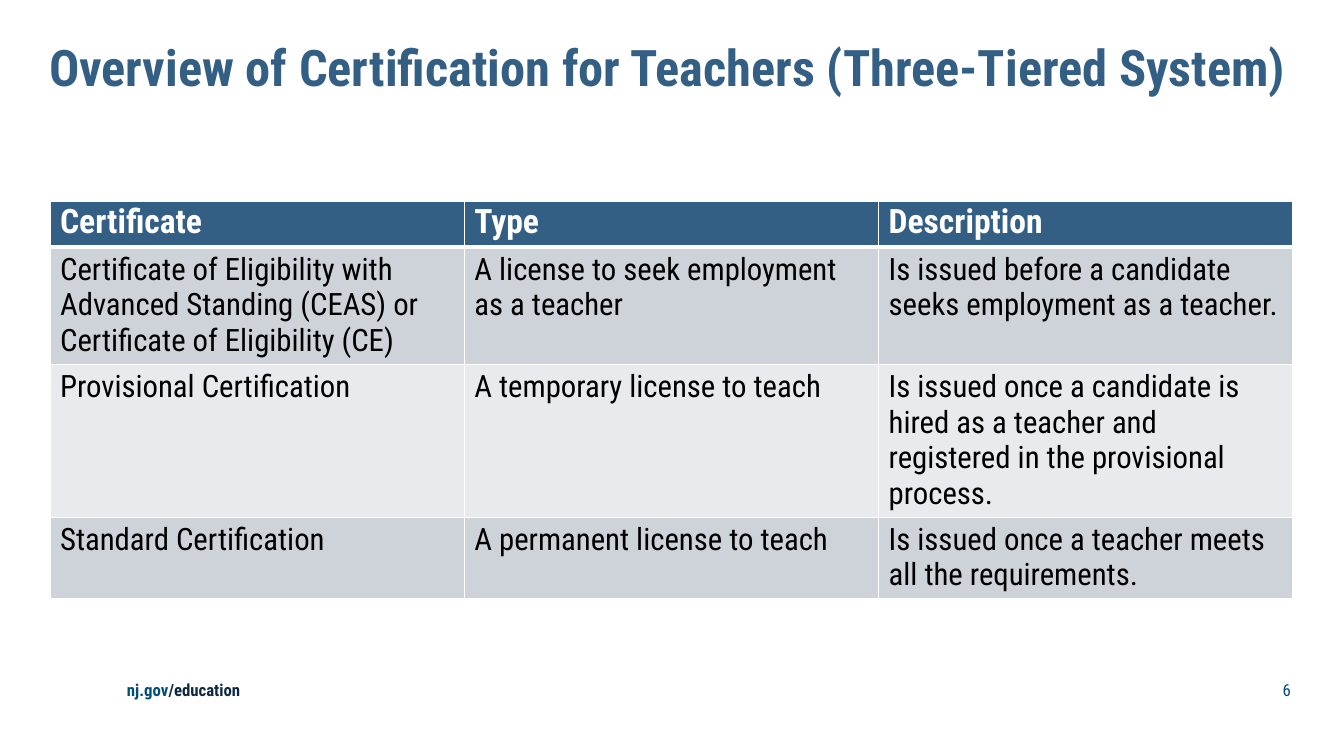
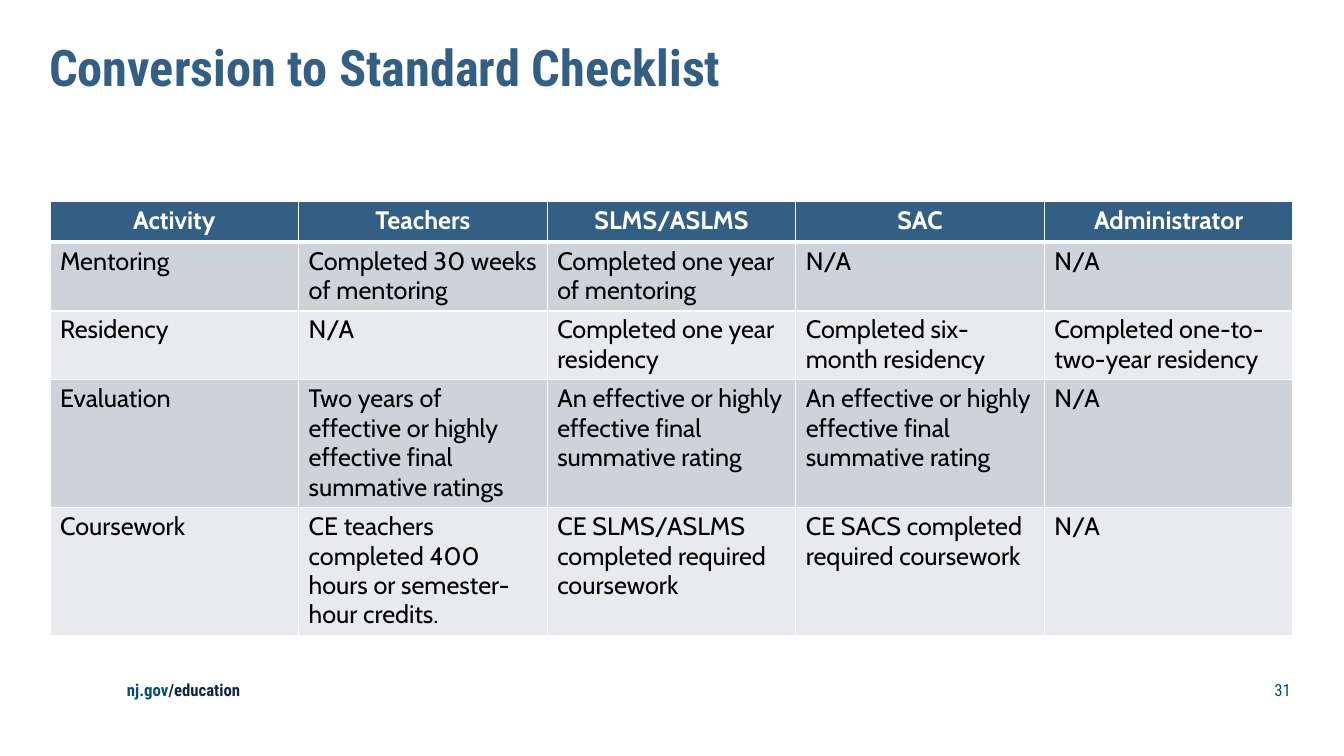
from dataclasses import dataclass

from lxml.etree import SubElement
from pptx import Presentation
from pptx.dml.color import RGBColor as Rgb
from pptx.enum.text import MSO_ANCHOR as Anchor, MSO_AUTO_SIZE as Fit, PP_ALIGN as Align
from pptx.oxml.ns import qn
from pptx.util import Emu, Pt

WIDE, HIGH = 1344, 756
SCALE = 12192000 / WIDE


def px(n):
    return Emu(round(n * SCALE))


@dataclass(frozen=True)
class Theme:
    head: str = "345F84"
    link: str = "004E75"
    navy: str = "0E2841"
    ink: str = "000000"
    white: str = "FFFFFF"
    bands: tuple = ("CED2D9", "E8EAED")
    font: str = "Roboto Condensed"
    alt: str = "Cabin"
    title: int = 36
    foot: int = 12
    thin: int = 1
    thick: int = 3


@dataclass(frozen=True)
class Grid:
    """Type settings of one table."""
    font: str
    head: int
    body: int
    lead: float
    align: Align


class Deck:
    def __init__(self, theme):
        self.theme = theme
        self.prs = Presentation()
        self.prs.slide_width, self.prs.slide_height = px(WIDE), px(HIGH)

    def page(self, title, num):
        t = self.theme
        self.slide = self.prs.slides.add_slide(self.prs.slide_layouts[5])
        self.title(title)
        self.label(127, [("nj.gov", t.link, True), ("/education", t.navy, True)])
        self.label(725, [(str(num), t.link, False)], Align.RIGHT)

    def run(self, para, text, size, color, bold=False, font=None):
        run = para.add_run()
        run.text = text
        run.font.name = font or self.theme.font
        run.font.size = Pt(size)
        run.font.bold = bold
        run.font.color.rgb = Rgb.from_string(color)

    def frame(self, shape, box, anchor):
        shape.left, shape.top, shape.width, shape.height = map(px, box)
        body = shape.text_frame
        body.margin_left = body.margin_top = body.margin_right = body.margin_bottom = 0
        body.word_wrap = True
        body.auto_size = Fit.NONE
        body.vertical_anchor = anchor
        return body.paragraphs[0]

    def title(self, text):
        para = self.frame(self.slide.shapes.title, (49, 43, 1243, 46), Anchor.TOP)
        para.alignment = Align.LEFT
        para.line_spacing = 0.9
        self.run(para, text, self.theme.title, self.theme.head, True)

    def label(self, left, runs, align=Align.LEFT):
        box = (left, 680, 566, 20)
        shape = self.slide.shapes.add_textbox(*map(px, box))
        para = self.frame(shape, box, Anchor.MIDDLE)
        para.alignment = align
        for text, color, bold in runs:
            self.run(para, text, self.theme.foot, color, bold)

    def edges(self, cell, row):
        t = self.theme
        props = cell._tc.get_or_add_tcPr()
        for side in "LRTB":
            # The rule under the header row is heavier
            heavy = (row, side) in ((0, "B"), (1, "T"))
            line = SubElement(props, qn(f"a:ln{side}"),
                              w=str(Pt(t.thick if heavy else t.thin)))
            fill = SubElement(line, qn("a:solidFill"))
            SubElement(fill, qn("a:srgbClr"), val=t.white)

    def table(self, grid, rows, highs):
        t = self.theme
        table = self.slide.shapes.add_table(
            len(rows), len(rows[0]), px(50), px(201), px(1243), px(sum(highs))).table
        table.first_row = table.horz_banding = False
        for r, (texts, high) in enumerate(zip(rows, highs)):
            table.rows[r].height = px(high)
            top = r == 0
            for c, text in enumerate(texts):
                cell = table.cell(r, c)
                self.edges(cell, r)
                cell.fill.solid()
                cell.fill.fore_color.rgb = Rgb.from_string(
                    t.head if top else t.bands[(r - 1) % 2])
                para = cell.text_frame.paragraphs[0]
                para.alignment = grid.align if top else Align.LEFT
                para.line_spacing = Pt(grid.lead)
                self.run(para, text, grid.head if top else grid.body,
                         t.white if top else t.ink, top, grid.font)


def main():
    theme = Theme()
    deck = Deck(theme)

    # Certification tiers
    deck.page("Overview of Certification for Teachers (Three-Tiered System)", 6)
    deck.table(Grid(theme.font, 24, 22, 25.5, Align.LEFT), [
        ("Certificate", "Type", "Description"),
        ("Certificate of Eligibility with Advanced Standing (CEAS) or "
         "Certificate of Eligibility (CE)",
         "A license to seek employment as a teacher",
         "Is issued before a candidate seeks employment as a teacher."),
        ("Provisional Certification", "A temporary license to teach",
         "Is issued once a candidate is hired as a teacher and registered "
         "in the provisional process."),
        ("Standard Certification", "A permanent license to teach",
         "Is issued once a teacher meets all the requirements."),
    ], (45, 117, 153, 81))

    # Conversion checklist
    rating = "An effective or highly effective final summative rating"
    deck.page("Conversion to Standard Checklist", 31)
    deck.table(Grid(theme.alt, 18, 18, 21, Align.CENTER), [
        ("Activity", "Teachers", "SLMS/ASLMS", "SAC", "Administrator"),
        ("Mentoring", "Completed 30 weeks of mentoring",
         "Completed one year of mentoring", "N/A", "N/A"),
        ("Residency", "N/A", "Completed one year residency",
         "Completed six-month residency", "Completed one-to-two-year residency"),
        ("Evaluation",
         "Two years of effective or highly effective final summative ratings",
         rating, rating, "N/A"),
        ("Coursework", "CE teachers completed 400 hours or semester-hour credits.",
         "CE SLMS/ASLMS completed required coursework",
         "CE SACS completed required coursework", "N/A"),
    ], (41, 68, 68, 127, 127))

    deck.prs.save("out.pptx")


if __name__ == "__main__":
    main()
